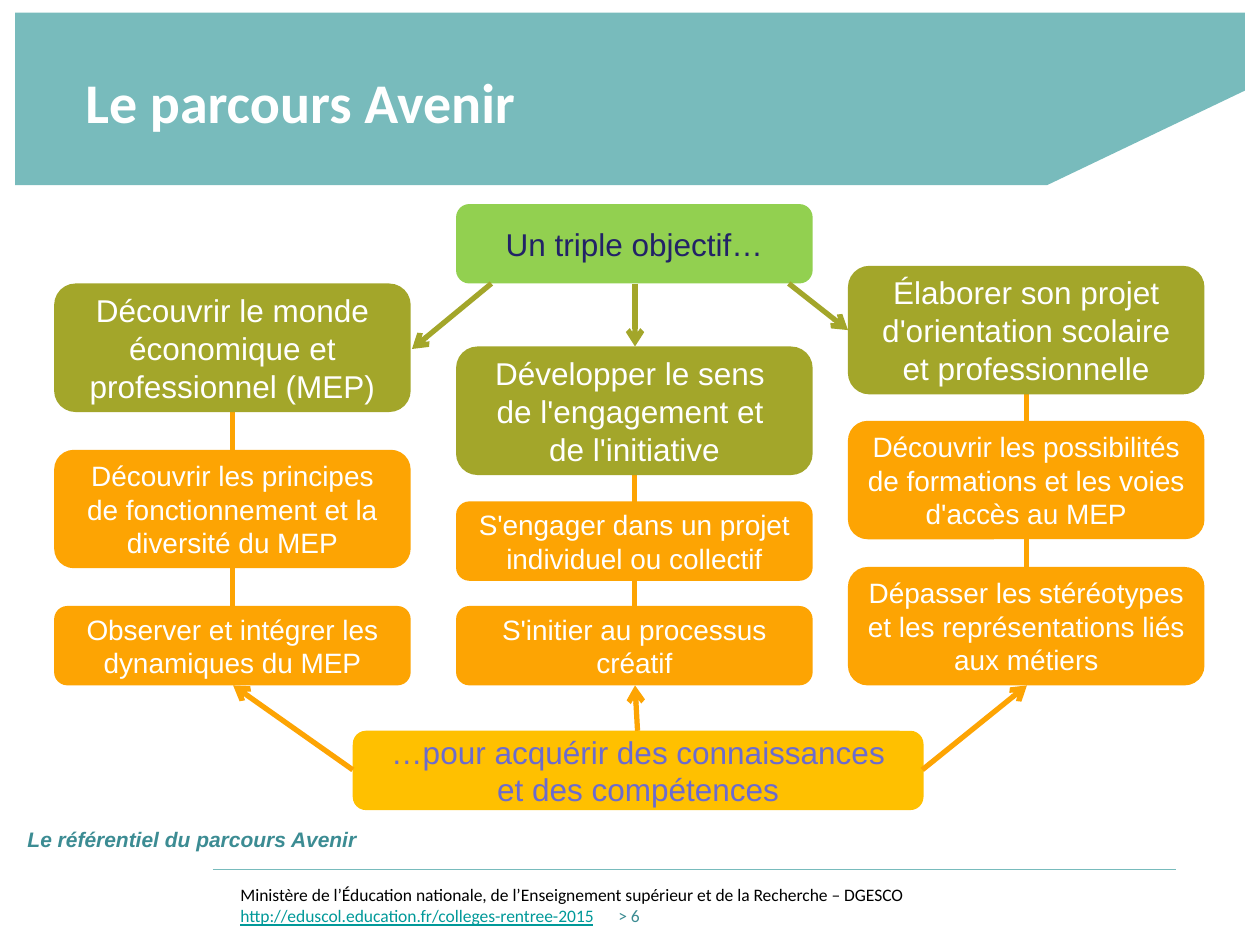
from lxml.etree import SubElement
from pptx import Presentation
from pptx.dml.color import RGBColor
from pptx.enum.shapes import MSO_CONNECTOR as Link, MSO_SHAPE as Shape
from pptx.enum.text import MSO_ANCHOR as Anchor, PP_ALIGN as Align
from pptx.oxml.ns import qn
from pptx.util import Inches, Pt

WHITE = RGBColor(0xFF, 0xFF, 0xFF)
BLACK = RGBColor(0, 0, 0)
TEAL = RGBColor(0x78, 0xBB, 0xBC)
DEEP = RGBColor(0x3C, 0x8C, 0x93)
LINK = RGBColor(0x00, 0x99, 0x99)
GREEN = RGBColor(0x92, 0xD0, 0x50)
OLIVE = RGBColor(0xA3, 0xA6, 0x2A)
ORANGE = RGBColor(0xFD, 0xA4, 0x03)
GOLD = RGBColor(0xFF, 0xC0, 0x00)
NAVY = RGBColor(0x22, 0x22, 0x67)
VIOLET = RGBColor(0x6B, 0x6B, 0xCF)

WIDE = 2.83
COLUMNS = [
    (0.43, [
        (2.25, 1.02, "Découvrir le monde économique et professionnel (MEP)"),
        (3.57, 0.94, "Découvrir les principes de fonctionnement et la diversité du MEP"),
        (4.81, 0.63, "Observer et intégrer les dynamiques du MEP"),
    ]),
    (3.62, [
        (2.75, 1.02, "Développer le sens \nde l'engagement et \nde l'initiative"),
        (3.98, 0.63, "S'engager dans un projet individuel ou collectif"),
        (4.81, 0.63, "S'initier au processus créatif"),
    ]),
    (6.73, [
        (2.11, 1.02, "Élaborer son projet d'orientation scolaire et professionnelle"),
        (3.34, 0.94, "Découvrir les possibilités de formations et les voies d'accès au MEP"),
        (4.5, 0.94, "Dépasser les stéréotypes et les représentations liés aux métiers"),
    ]),
]
AIMS = [((3.9, 2.25), (3.27, 2.77)),
        ((5.04, 2.25), (5.04, 2.75)),
        ((6.26, 2.25), (6.73, 2.62))]
SKILLS = [((2.8, 6.11), (1.85, 5.44)),
          ((5.06, 5.8), (5.04, 5.44)),
          ((7.32, 6.11), (8.15, 5.44))]


def style(font, size, color, name="Arial", bold=False, italic=False):
    """Set the look of a font."""
    font.name, font.size, font.bold, font.italic = name, Pt(size), bold, italic
    font.color.rgb = color


def add_text(slide, left, top, width, height, wrap=True):
    """Add a text box and return its frame."""
    frame = slide.shapes.add_textbox(*map(Inches, (left, top, width, height))).text_frame
    frame.word_wrap = wrap
    return frame


def add_box(slide, left, top, width, height, text, fill, size=18, color=WHITE):
    """Add a rounded box with centred text."""
    box = slide.shapes.add_shape(
        Shape.ROUNDED_RECTANGLE, *map(Inches, (left, top, width, height)))
    box.shadow.inherit = False
    box.fill.solid()
    box.fill.fore_color.rgb = fill
    box.line.fill.background()
    frame = box.text_frame
    frame.word_wrap = True
    frame.vertical_anchor = Anchor.MIDDLE
    para = frame.paragraphs[0]
    para.text = text
    para.alignment = Align.CENTER
    style(para.font, size, color)


def add_line(slide, start, end, color, width=3, arrow=False):
    """Add a straight line, with an arrowhead at its end if asked."""
    line = slide.shapes.add_connector(Link.STRAIGHT, *map(Inches, (*start, *end)))
    line.line.color.rgb = color
    line.line.width = Pt(width)
    if arrow:
        SubElement(line.line._get_or_add_ln(), qn("a:tailEnd"), type="arrow")
    SubElement(line._element.spPr, qn("a:effectLst"))


def add_banner(slide):
    """Add the cut banner and the title on it."""
    path = slide.shapes.build_freeform(Inches(9.88), Inches(0.1))
    corners = [(0.12, 0.1), (0.12, 1.47), (8.31, 1.47), (9.88, 0.72)]
    path.add_line_segments([(Inches(x), Inches(y)) for x, y in corners])
    banner = path.convert_to_shape()
    banner.shadow.inherit = False
    banner.fill.solid()
    banner.fill.fore_color.rgb = TEAL
    banner.line.fill.background()
    frame = add_text(slide, 0.58, 0.13, 8.99, 1.34)
    frame.vertical_anchor = Anchor.MIDDLE
    para = frame.paragraphs[0]
    para.text = "Le parcours Avenir"
    style(para.font, 32, WHITE, "Calibri", bold=True)


def add_column(slide, left, boxes):
    """Add an aim with its steps, joined by a line behind them."""
    mid = left + WIDE / 2
    first, last = boxes[0], boxes[-1]
    add_line(slide, (mid, first[0] + first[1]), (mid, last[0]), ORANGE)
    for row, (top, height, text) in enumerate(boxes):
        fill, size = (ORANGE, 16) if row else (OLIVE, 18)
        add_box(slide, left, top, WIDE, height, text, fill, size)


def add_footer(slide):
    """Add the caption, the rule and the footer text."""
    para = add_text(slide, 0.12, 6.51, 2.83, 0.3, wrap=False).paragraphs[0]
    para.text = "Le référentiel du parcours Avenir"
    style(para.font, 12, DEEP, bold=True, italic=True)
    add_line(slide, (1.69, 6.9), (9.33, 6.9), TEAL, 0.75)
    frame = add_text(slide, 1.81, 6.97, 7.76, 0.53)
    para = frame.paragraphs[0]
    para.text = ("Ministère de l’Éducation nationale, de l’Enseignement supérieur "
                 "et de la Recherche – DGESCO")
    style(para.font, 10, BLACK, "Calibri")
    para = frame.add_paragraph()
    tabs = SubElement(para._p.get_or_add_pPr(), qn("a:tabLst"))
    SubElement(tabs, qn("a:tab"), pos=str(Inches(3)), algn="l")
    for text, color, under in [
            ("http://eduscol.education.fr/colleges-rentree-2015", LINK, True),
            ("\t> 6", DEEP, False)]:
        run = para.add_run()
        run.text = text
        style(run.font, 10, color, "Calibri")
        run.font.underline = under


def main():
    """Build the slide and save it."""
    deck = Presentation()
    deck.slide_width, deck.slide_height = Inches(10), Inches(7.5)
    slide = deck.slides.add_slide(deck.slide_layouts[6])
    add_banner(slide)
    add_box(slide, 3.62, 1.62, WIDE, 0.63, "Un triple objectif…", GREEN, color=NAVY)
    for left, boxes in COLUMNS:
        add_column(slide, left, boxes)
    add_box(slide, 2.8, 5.8, 4.53, 0.63,
            "…pour acquérir des connaissances\net des compétences", GOLD, color=VIOLET)
    for color, arrows in [(OLIVE, AIMS), (ORANGE, SKILLS)]:
        for start, end in arrows:
            add_line(slide, start, end, color, arrow=True)
    add_footer(slide)
    deck.save("out.pptx")


if __name__ == "__main__":
    main()
